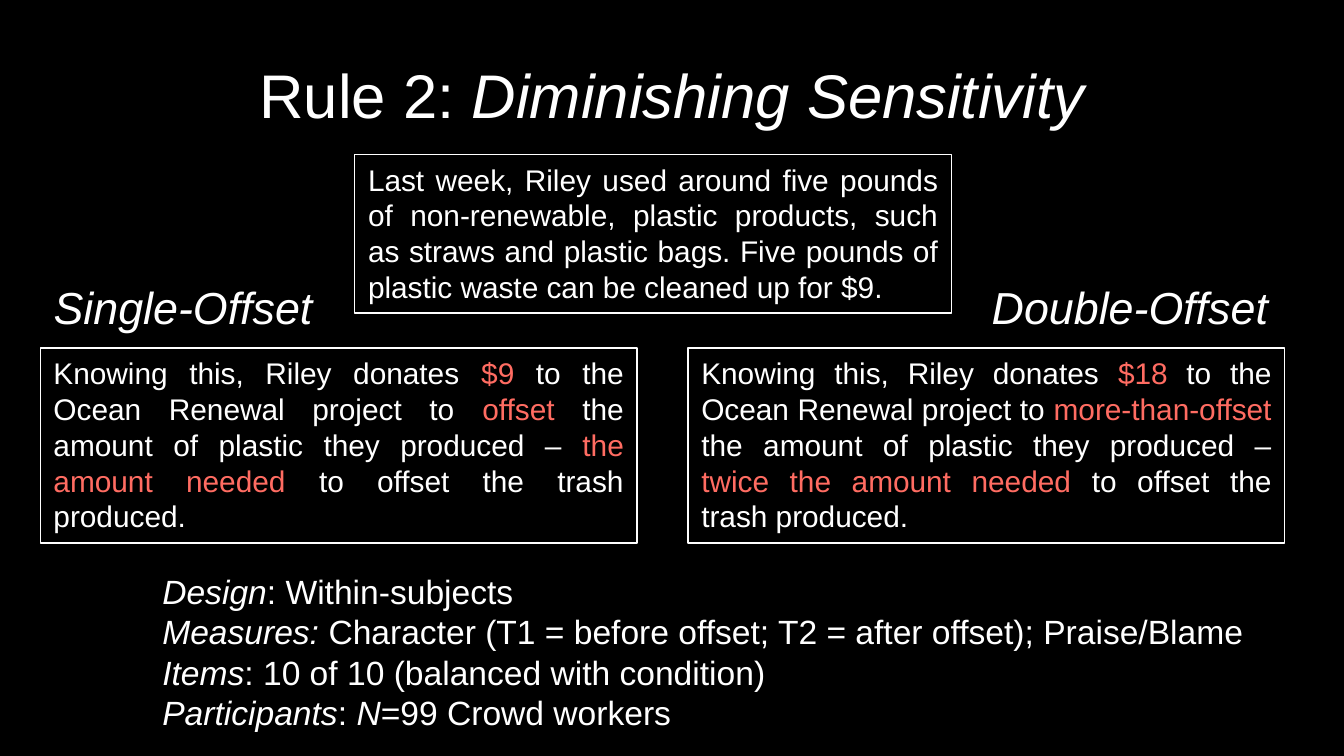
from pptx import Presentation
from pptx.dml.color import RGBColor
from pptx.enum.shapes import MSO_SHAPE
from pptx.enum.text import MSO_ANCHOR, MSO_AUTO_SIZE, PP_ALIGN
from pptx.util import Inches, Pt

COLORS = {"background": "000000", "text": "FFFFFF", "accent": "FF6C62"}
FONT = "Arial"
CARD_WIDTH = 4.44


def color(name):
    return RGBColor.from_string(COLORS[name])


def add_runs(paragraph, runs, size):
    for text, style in runs:
        run = paragraph.add_run()
        run.text = text
        run.font.name = FONT
        run.font.size = Pt(size)
        run.font.italic = style == "italic"
        run.font.color.rgb = color("accent" if style == "accent" else "text")


def fill_frame(frame, paragraphs, size, align=PP_ALIGN.LEFT, anchor=MSO_ANCHOR.TOP, wrap=True):
    frame.word_wrap = wrap
    frame.vertical_anchor = anchor
    for index, runs in enumerate(paragraphs):
        paragraph = frame.add_paragraph() if index else frame.paragraphs[0]
        paragraph.alignment = align
        add_runs(paragraph, runs, size)


def add_text(slide, box, paragraphs, size, **layout):
    shape = slide.shapes.add_textbox(*map(Inches, box))
    fill_frame(shape.text_frame, paragraphs, size, **layout)


def add_card(slide, box, runs):
    shape = slide.shapes.add_shape(MSO_SHAPE.RECTANGLE, *map(Inches, box))
    shape.shadow.inherit = False
    shape.fill.background()
    shape.line.color.rgb = color("text")
    shape.line.width = Pt(0.75)
    fill_frame(shape.text_frame, [runs], 16, align=PP_ALIGN.JUSTIFY)
    shape.text_frame.auto_size = MSO_AUTO_SIZE.SHAPE_TO_FIT_TEXT


def add_condition(slide, box, heading, heading_left, heading_width, amount, action, share):
    left, top, width, height = box
    add_text(slide, (left + heading_left, top, heading_width, 0.5),
             [[(heading, "italic")]], 24, wrap=False)
    add_card(slide, (left, top + 0.56, width, height - 0.56), [
        ("Knowing this, Riley donates ", "plain"),
        (amount, "accent"),
        (" to the Ocean Renewal project to ", "plain"),
        (action, "accent"),
        (" the amount of plastic they produced – ", "plain"),
        (share, "accent"),
        ("to offset the trash produced.", "plain"),
    ])


def add_study_details(slide, box):
    add_text(slide, box, [
        [("Design", "italic"), (": Within-subjects", "plain")],
        [("Measures: ", "italic"),
         ("Character (T1 = before offset; T2 = after offset); Praise/Blame", "plain")],
        [("Items", "italic"), (": 10 of 10 (balanced with condition)", "plain")],
        [("Participants", "italic"), (": ", "plain"), ("N", "italic"),
         ("=99 Crowd workers", "plain")],
    ], 18)


def main():
    presentation = Presentation()
    presentation.slide_width = Inches(10)
    presentation.slide_height = presentation.slide_width * 9 // 16
    slide = presentation.slides.add_slide(presentation.slide_layouts[6])
    slide.background.fill.solid()
    slide.background.fill.fore_color.rgb = color("background")

    add_text(slide, (0.5, 0.23, 9, 0.94),
             [[("Rule 2: ", "plain"), ("Diminishing Sensitivity", "italic")]],
             33, align=PP_ALIGN.CENTER, anchor=MSO_ANCHOR.MIDDLE)
    add_condition(slide, (0.3, 2.03, CARD_WIDTH, 2.01), "Single-Offset", 0, 2.15,
                  "$9", "offset", "the amount needed ")
    add_condition(slide, (5.12, 2.03, CARD_WIDTH, 2.01), "Double-Offset", 2.16, 2.28,
                  "$18", "more-than-offset", "twice the amount needed ")
    add_study_details(slide, (1.11, 4.2, 8.76, 1.31))
    add_card(slide, (2.64, 1.15, CARD_WIDTH, 1.18), [
        ("Last week, Riley used around five pounds of non-renewable, plastic products, "
         "such as straws and plastic bags. Five pounds of plastic waste can be cleaned "
         "up for $9. ", "plain"),
    ])
    presentation.save("out.pptx")


if __name__ == "__main__":
    main()
